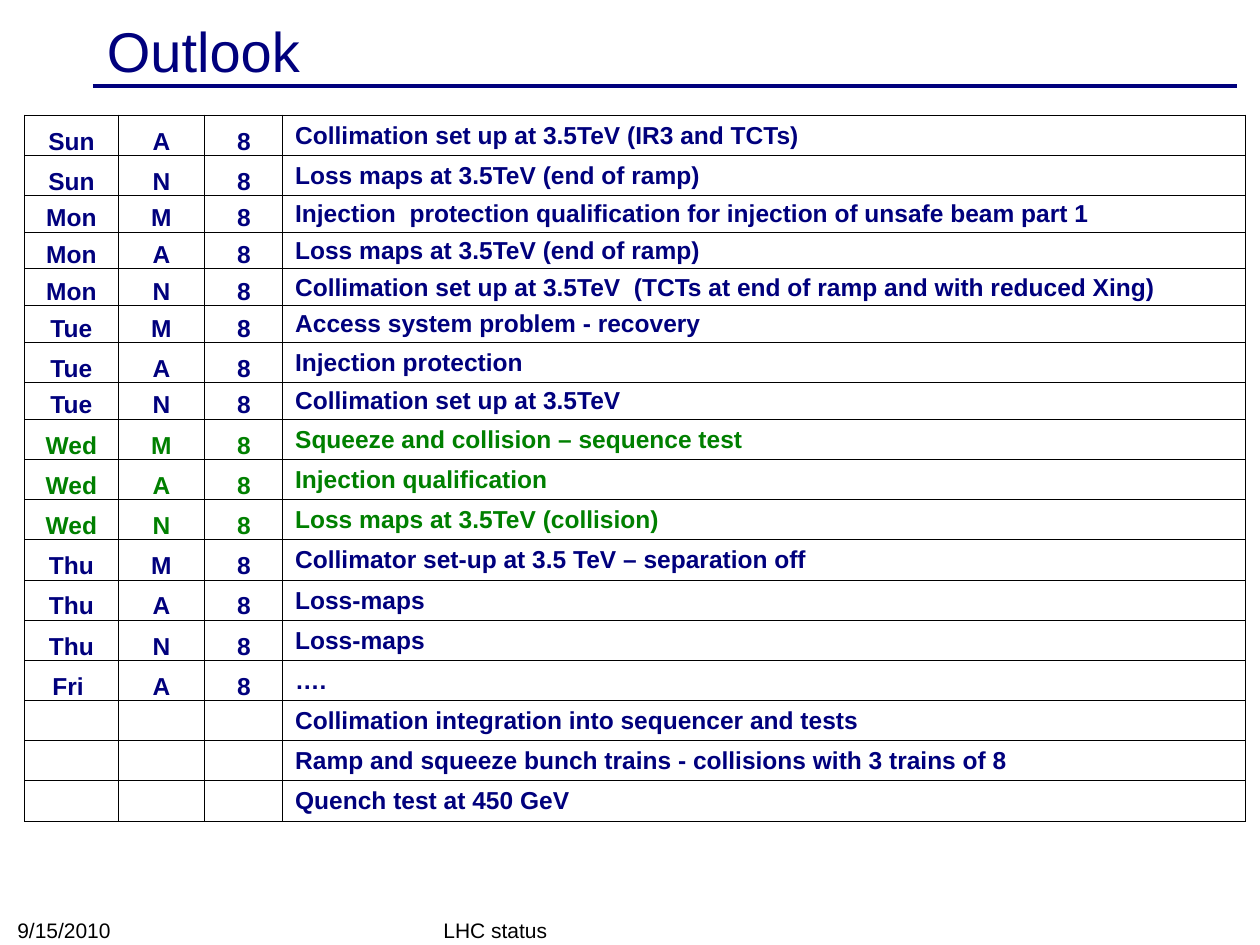
from lxml import etree
from pptx import Presentation
from pptx.dml.color import RGBColor
from pptx.enum.shapes import MSO_CONNECTOR
from pptx.enum.text import MSO_ANCHOR, MSO_AUTO_SIZE, PP_ALIGN
from pptx.oxml.ns import qn
from pptx.util import Cm, Pt

NAVY = RGBColor(0x00, 0x00, 0x7D)
GREEN = RGBColor(0x00, 0x80, 0x00)
BLACK = RGBColor(0x00, 0x00, 0x00)
LEFT, CENTER = PP_ALIGN.LEFT, PP_ALIGN.CENTER
MIDDLE, BOTTOM = MSO_ANCHOR.MIDDLE, MSO_ANCHOR.BOTTOM
NO_AUTOFIT = MSO_AUTO_SIZE.NONE
STRAIGHT = MSO_CONNECTOR.STRAIGHT
TITLE_ONLY = 5

COLUMN_WIDTHS = [1.88, 1.75, 1.57, 19.41]
TALL, SHORT = 0.81, 0.74

SHIFTS = [
    ("Sun", "A", "8", "Collimation set up at 3.5TeV (IR3 and TCTs)", TALL),
    ("Sun", "N", "8", "Loss maps at 3.5TeV (end of ramp)", TALL),
    ("Mon", "M", "8", "Injection  protection qualification for injection of unsafe beam part 1", SHORT),
    ("Mon", "A", "8", "Loss maps at 3.5TeV (end of ramp)", SHORT),
    ("Mon", "N", "8", "Collimation set up at 3.5TeV  (TCTs at end of ramp and with reduced Xing)", SHORT),
    ("Tue", "M", "8", "Access system problem - recovery", SHORT),
    ("Tue", "A", "8", "Injection protection", TALL),
    ("Tue", "N", "8", "Collimation set up at 3.5TeV", SHORT),
    ("Wed", "M", "8", "Squeeze and collision – sequence test", TALL),
    ("Wed", "A", "8", "Injection qualification", TALL),
    ("Wed", "N", "8", "Loss maps at 3.5TeV (collision)", TALL),
    ("Thu", "M", "8", "Collimator set-up at 3.5 TeV – separation off", TALL),
    ("Thu", "A", "8", "Loss-maps", TALL),
    ("Thu", "N", "8", "Loss-maps", TALL),
    ("Fri ", "A", "8", "….", TALL),
    ("", "", "", "Collimation integration into sequencer and tests", TALL),
    ("", "", "", "Ramp and squeeze bunch trains - collisions with 3 trains of 8", TALL),
    ("", "", "", "Quench test at 450 GeV", TALL),
]


def write_text(frame, text, size=14, color=NAVY, bold=False, align=LEFT):
    paragraph = frame.paragraphs[0]
    paragraph.alignment = align
    if text:
        run = paragraph.add_run()
        run.text = text
        run.font.name = "Arial"
        run.font.size = Pt(size)
        run.font.bold = bold
        run.font.color.rgb = color


def add_title(slide, text):
    title = slide.shapes.title
    title.left, title.top = Cm(1.9), Cm(0.28)
    title.width, title.height = Cm(22.86), Cm(1.45)
    title.text_frame.auto_size = NO_AUTOFIT
    title.text_frame.vertical_anchor = MIDDLE
    write_text(title.text_frame, text, size=32)


def add_title_rule(slide):
    rule = slide.shapes.add_connector(STRAIGHT, Cm(1.87), Cm(1.73), Cm(24.94), Cm(1.73))
    rule.line.color.rgb = NAVY
    rule.line.width = Pt(2)
    etree.SubElement(rule._element.spPr, qn("a:effectLst"))


def set_borders(cell, color=BLACK, width=0.5):
    properties = cell._tc.get_or_add_tcPr()
    for position, side in enumerate(("lnL", "lnR", "lnT", "lnB")):
        border = etree.Element(qn(f"a:{side}"), w=str(int(Pt(width))))
        fill = etree.SubElement(border, qn("a:solidFill"))
        etree.SubElement(fill, qn("a:srgbClr"), val=str(color))
        properties.insert(position, border)


def format_cell(cell, text, color, is_activity):
    cell.fill.background()
    cell.margin_left = Cm(0.25 if is_activity else 0.02)
    cell.margin_right = cell.margin_top = Cm(0.02)
    cell.margin_bottom = 0
    cell.vertical_anchor = MIDDLE if is_activity else BOTTOM
    set_borders(cell)
    write_text(cell.text_frame, text, color=color, bold=True,
               align=LEFT if is_activity else CENTER)


def add_schedule(slide):
    total_height = sum(shift[-1] for shift in SHIFTS)
    schedule = slide.shapes.add_table(
        len(SHIFTS), len(COLUMN_WIDTHS), Cm(0.5), Cm(2.32),
        Cm(sum(COLUMN_WIDTHS)), Cm(total_height)).table
    schedule.first_row = False
    schedule.horz_banding = False
    for column, width in zip(schedule.columns, COLUMN_WIDTHS):
        column.width = Cm(width)
    for row, (*entries, height) in zip(schedule.rows, SHIFTS):
        row.height = Cm(height)
        color = GREEN if entries[0] == "Wed" else NAVY
        for index, (cell, entry) in enumerate(zip(row.cells, entries)):
            format_cell(cell, entry, color, is_activity=index == 3)


def add_footer(slide, text, left, top, width, height):
    footer = slide.shapes.add_textbox(Cm(left), Cm(top), Cm(width), Cm(height))
    footer.text_frame.word_wrap = True
    footer.text_frame.vertical_anchor = BOTTOM
    write_text(footer.text_frame, text, size=12, color=BLACK)


def main():
    presentation = Presentation()
    presentation.slide_width, presentation.slide_height = Cm(25.4), Cm(19.05)
    slide = presentation.slides.add_slide(presentation.slide_layouts[TITLE_ONLY])
    add_title_rule(slide)
    add_title(slide, "Outlook")
    add_schedule(slide)
    add_footer(slide, "LHC status", 8.69, 18.41, 8.05, 0.72)
    add_footer(slide, "9/15/2010", 0.1, 18.4, 5.92, 0.73)
    presentation.save("out.pptx")


if __name__ == "__main__":
    main()
